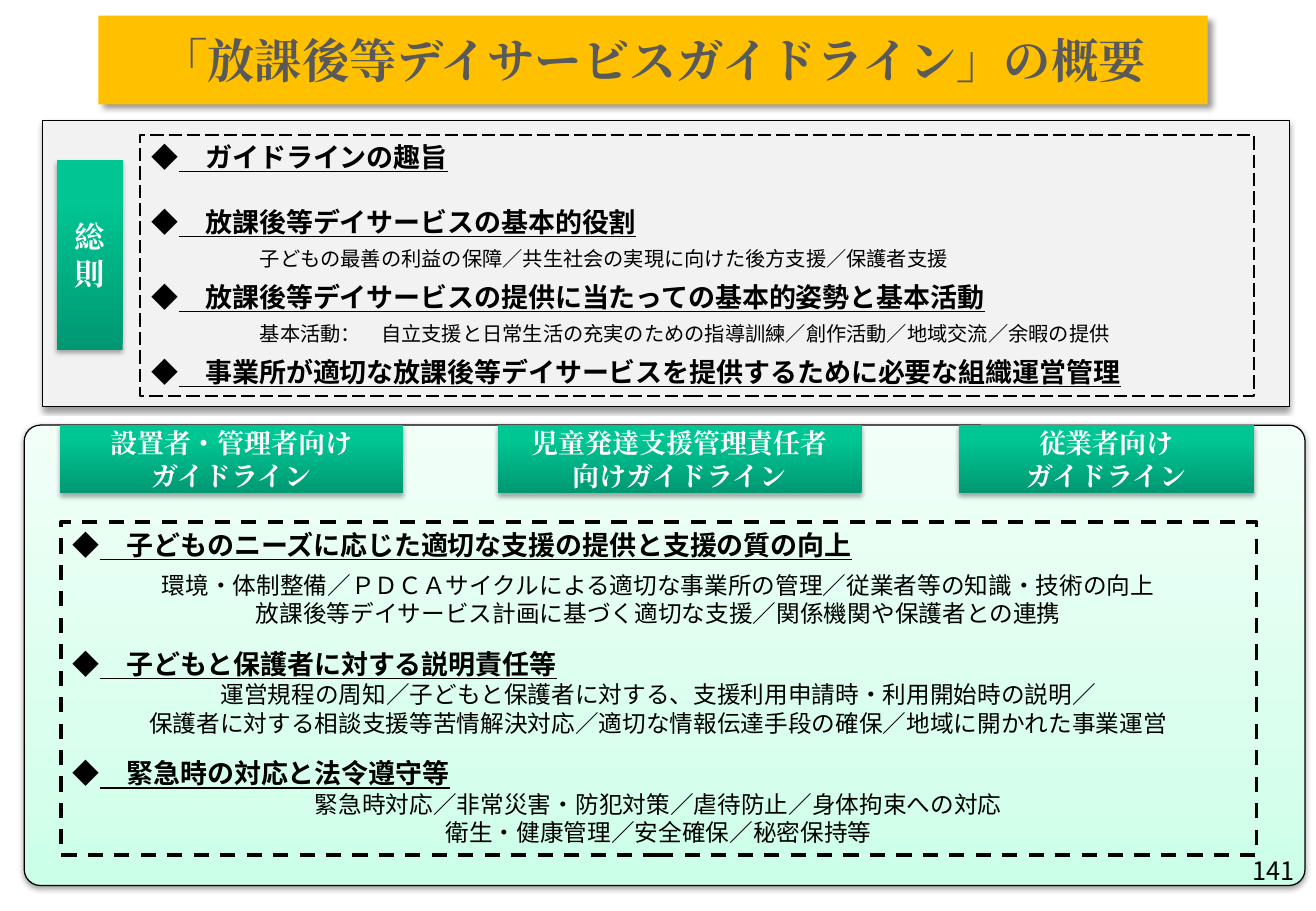
from dataclasses import dataclass
from typing import Optional

from lxml.etree import SubElement
from pptx import Presentation
from pptx.dml.color import RGBColor
from pptx.enum.dml import MSO_LINE
from pptx.enum.shapes import MSO_SHAPE
from pptx.enum.text import MSO_ANCHOR, PP_ALIGN
from pptx.oxml import parse_xml
from pptx.oxml.ns import nsdecls, qn
from pptx.util import Emu, Pt

PX = 9144  # 100 px to the inch
LINE_PITCH = 1.2
SANS = "Noto Sans CJK JP"
SERIF = "Times New Roman"
COLORS = {
    "black": "000000", "white": "FFFFFF", "grey": "595959",
    "amber": "FFC000", "panel": "F2F2F2",
    "green_deep": "009872", "green": "00C694", "green_light": "00C795",
    "mint_deep": "CCFFE8", "mint": "DAFFEE", "mint_light": "F1FFF8",
}
GREEN = ((0, "green_deep"), (80, "green"), (100, "green_light"))
MINT = ((0, "mint_deep"), (35, "mint"), (100, "mint_light"))


@dataclass(frozen=True)
class Shadow:
    alpha: int
    blur: float
    distance: float
    angle: int


@dataclass(frozen=True)
class Box:
    left: int
    top: int
    width: int
    height: int
    fill: Optional[str] = None
    gradient: tuple = ()
    line: float = 0
    dash: Optional[MSO_LINE] = None
    shadow: Optional[Shadow] = None
    radius: float = 0


@dataclass(frozen=True)
class Label:
    box: Box
    text: str
    size: int
    color: str = "white"


@dataclass(frozen=True)
class Line:
    text: str
    size: int = 16
    heading: bool = False
    align: PP_ALIGN = PP_ALIGN.LEFT
    indent: int = 0
    before: float = 0
    after: float = 0


PANEL_SHADOW = Shadow(38, 3.1, 1.6, 90)
GREEN_SHADOW = Shadow(35, 3.1, 1.8, 90)


def green_box(left: int, top: int, width: int, height: int) -> Box:
    return Box(left, top, width, height, gradient=GREEN, shadow=GREEN_SHADOW)


def heading(text: str, before: float = 0, after: float = 0) -> Line:
    return Line(text, heading=True, before=before, after=after)


def detail(text: str) -> Line:
    return Line(text, size=12, indent=89, after=6)


def centred(text: str) -> Line:
    return Line(text, size=14, align=PP_ALIGN.CENTER)


TITLE = Label(Box(81, 13, 913, 73, fill="amber", shadow=Shadow(40, 4, 3, 45)),
              "「放課後等デイサービスガイドライン」の概要", 28, "grey")
GENERAL_PANEL = Box(35, 99, 1026, 236, fill="panel", line=0.75, shadow=PANEL_SHADOW)
GENERAL_LABEL = Label(green_box(47, 132, 54, 156), "総則", 18)
GUIDE_PANEL = Box(20, 350, 1054, 379, gradient=MINT, line=0.75,
                  shadow=PANEL_SHADOW, radius=0.035)
GUIDE_LABELS = [
    Label(green_box(left, 350, width, 56), text, 16)
    for left, width, text in (
        (789, 243, "従業者向け\nガイドライン"),
        (410, 299, "児童発達支援管理責任者\n向けガイドライン"),
        (49, 283, "設置者・管理者向け\nガイドライン"),
    )
]
GENERAL_FRAME = Box(115, 111, 917, 215, line=1, dash=MSO_LINE.LONG_DASH)
GENERAL_LINES = [
    heading("ガイドラインの趣旨"),
    heading("放課後等デイサービスの基本的役割", before=19.2),
    detail("子どもの最善の利益の保障／共生社会の実現に向けた後方支援／保護者支援"),
    heading("放課後等デイサービスの提供に当たっての基本的姿勢と基本活動"),
    detail("基本活動：　自立支援と日常生活の充実のための指導訓練／創作活動／地域交流／余暇の提供"),
    heading("事業所が適切な放課後等デイサービスを提供するために必要な組織運営管理"),
]
GUIDE_FRAME = Box(50, 430, 984, 274, line=2.25, dash=MSO_LINE.DASH)
GUIDE_LINES = [
    heading("子どものニーズに応じた適切な支援の提供と支援の質の向上", after=6),
    centred("環境・体制整備／ＰＤＣＡサイクルによる適切な事業所の管理／従業者等の知識・技術の向上"),
    centred("放課後等デイサービス計画に基づく適切な支援／関係機関や保護者との連携"),
    heading("子どもと保護者に対する説明責任等", before=12),
    centred("運営規程の周知／子どもと保護者に対する、支援利用申請時・利用開始時の説明／"),
    centred("保護者に対する相談支援等苦情解決対応／適切な情報伝達手段の確保／地域に開かれた事業運営"),
    heading("緊急時の対応と法令遵守等", before=12),
    centred("緊急時対応／非常災害・防犯対策／虐待防止／身体拘束への対応"),
    centred("衛生・健康管理／安全確保／秘密保持等"),
]


def rgb(name: str) -> RGBColor:
    return RGBColor.from_string(COLORS[name])


def px(*lengths: int) -> list:
    return [Emu(length * PX) for length in lengths]


def add_shadow(shape, shadow: Shadow) -> None:
    effects = shape._element.spPr.find(qn("a:effectLst"))
    outer = SubElement(effects, qn("a:outerShdw"), blurRad=str(Pt(shadow.blur)),
                       dist=str(Pt(shadow.distance)), dir=str(shadow.angle * 60000),
                       algn="t", rotWithShape="0")
    color = SubElement(outer, qn("a:srgbClr"), val=COLORS["black"])
    SubElement(color, qn("a:alpha"), val=str(shadow.alpha * 1000))


def add_gradient(shape, stops: tuple) -> None:
    marks = "".join(f'<a:gs pos="{place * 1000}"><a:srgbClr val="{COLORS[name]}"/></a:gs>'
                    for place, name in stops)
    gradient = parse_xml(f'<a:gradFill {nsdecls("a")} rotWithShape="1"><a:gsLst>{marks}'
                         '</a:gsLst><a:lin ang="16200000" scaled="0"/></a:gradFill>')
    shape._element.spPr.find(qn("a:prstGeom")).addnext(gradient)


def draw_box(page, box: Box):
    kind = MSO_SHAPE.ROUNDED_RECTANGLE if box.radius else MSO_SHAPE.RECTANGLE
    shape = page.shapes.add_shape(kind, *px(box.left, box.top, box.width, box.height))
    if box.radius:
        shape.adjustments[0] = box.radius
    if box.gradient:
        add_gradient(shape, box.gradient)
    elif box.fill:
        shape.fill.solid()
        shape.fill.fore_color.rgb = rgb(box.fill)
    else:
        shape.fill.background()
    if box.line:
        shape.line.color.rgb = rgb("black")
        shape.line.width = Pt(box.line)
        shape.line.dash_style = box.dash
    else:
        shape.line.fill.background()
    shape.shadow.inherit = False
    if box.shadow:
        add_shadow(shape, box.shadow)
    return shape


def set_font(para, name: str, size: int, color: str, bold: bool = False) -> None:
    para.line_spacing = Pt(size * LINE_PITCH)
    para.font.name = name
    para.font.size = Pt(size)
    para.font.bold = bold
    para.font.color.rgb = rgb(color)
    # East Asian typeface follows the Latin one
    para.font._element.find(qn("a:latin")).addnext(
        parse_xml(f'<a:ea {nsdecls("a")} typeface="{name}"/>'))


def draw_label(page, label: Label) -> None:
    frame = draw_box(page, label.box).text_frame
    frame.word_wrap = True
    frame.vertical_anchor = MSO_ANCHOR.MIDDLE
    frame.text = label.text
    for para in frame.paragraphs:
        para.alignment = PP_ALIGN.CENTER
        set_font(para, SERIF, label.size, label.color, bold=True)


def draw_lines(page, box: Box, lines: list) -> None:
    frame = draw_box(page, box).text_frame
    frame.word_wrap = True
    frame.vertical_anchor = MSO_ANCHOR.TOP
    for index, line in enumerate(lines):
        para = frame.add_paragraph() if index else frame.paragraphs[0]
        para.alignment = line.align
        para.space_before, para.space_after = Pt(line.before), Pt(line.after)
        set_font(para, SANS, line.size, "black")
        if line.heading:
            para.add_run().text = "◆"
        elif line.indent:
            para._p.get_or_add_pPr().set("marL", str(line.indent * PX))
        span = para.add_run()
        span.text = "　" + line.text if line.heading else line.text
        if line.heading:
            span.font.bold = span.font.underline = True
        if line.indent:
            para.line_spacing = Pt(16 * LINE_PITCH)


def draw_page_number(page, number: str) -> None:
    frame = page.shapes.add_textbox(*px(849, 699, 226, 34)).text_frame
    frame.word_wrap = True
    frame.text = number
    frame.paragraphs[0].alignment = PP_ALIGN.RIGHT
    set_font(frame.paragraphs[0], SANS, 15, "black")


def main() -> None:
    deck = Presentation()
    deck.slide_width, deck.slide_height = px(1083, 750)
    page = deck.slides.add_slide(deck.slide_layouts[6])
    # Title and general rules
    draw_label(page, TITLE)
    draw_box(page, GENERAL_PANEL)
    draw_label(page, GENERAL_LABEL)
    # Guidelines by reader
    draw_box(page, GUIDE_PANEL)
    for label in GUIDE_LABELS:
        draw_label(page, label)
    # Dashed text frames
    draw_lines(page, GENERAL_FRAME, GENERAL_LINES)
    draw_lines(page, GUIDE_FRAME, GUIDE_LINES)
    draw_page_number(page, "141")
    deck.save("out.pptx")


if __name__ == "__main__":
    main()
